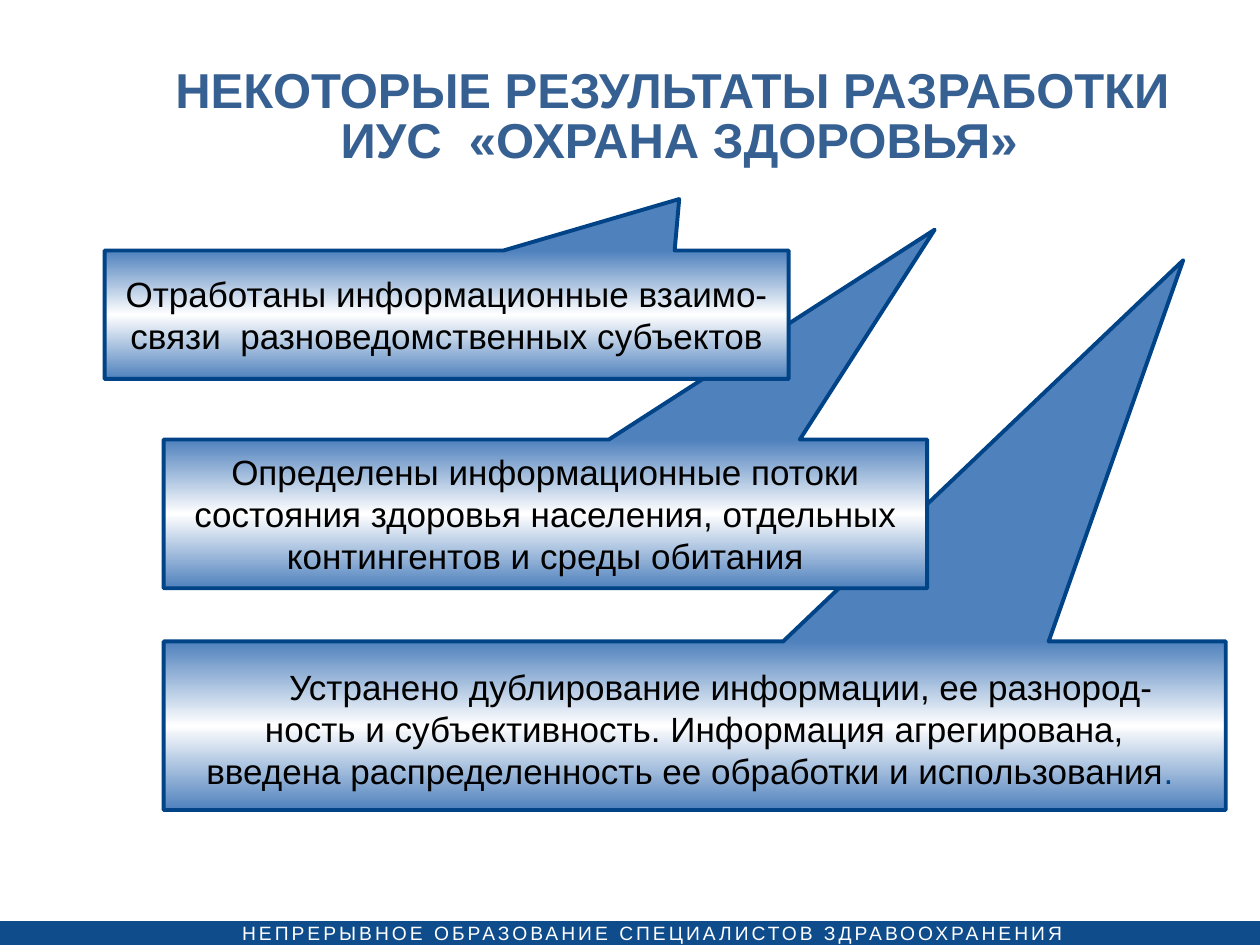
from copy import deepcopy
from dataclasses import dataclass
from pptx import Presentation
from pptx.dml.color import RGBColor as Rgb
from pptx.enum.shapes import MSO_SHAPE as Kind
from pptx.enum.text import MSO_ANCHOR as Anchor, PP_ALIGN as Align
from pptx.util import Cm, Pt


@dataclass(frozen=True)
class Theme:
    font: str = "Arial"
    title: str = "376092"
    edge: str = "004386"
    blue: str = "4F81BD"
    bar: str = "0F4C8B"
    ink: str = "000000"
    white: str = "FFFFFF"
    head: int = 28
    body: int = 20
    foot: int = 11


class Deck:
    def __init__(self, theme):
        self.theme = theme
        self.file = Presentation()
        self.file.slide_width, self.file.slide_height = Cm(25.4), Cm(19.05)
        self.slide = self.file.slides.add_slide(self.file.slide_layouts[6])

    def style(self, run, size, color, bold=False):
        font = run.font
        font.name, font.size, font.bold = self.theme.font, Pt(size), bold
        font.color.rgb = Rgb.from_string(color)

    def shape(self, kind, box):
        item = self.slide.shapes.add_shape(kind, *map(Cm, box))
        item.shadow.inherit = False
        return item

    def frame(self, box):
        frame = self.slide.shapes.add_textbox(*map(Cm, box)).text_frame
        frame.word_wrap = True
        return frame

    def title(self, box, text):
        frame = self.frame(box)
        frame.vertical_anchor = Anchor.MIDDLE
        frame.text = text
        para = frame.paragraphs[0]
        para.alignment, para.line_spacing = Align.CENTER, 0.85
        for run in para.runs:
            self.style(run, self.theme.head, self.theme.title, True)

    def footer(self, bar, box, text):
        band = self.shape(Kind.RECTANGLE, bar)
        band.fill.solid()
        band.fill.fore_color.rgb = Rgb.from_string(self.theme.bar)
        band.line.fill.background()
        frame = self.frame(box)
        frame.margin_left = frame.margin_right = 0
        frame.margin_top = frame.margin_bottom = 0
        frame.text = text
        run = frame.paragraphs[0].runs[0]
        self.style(run, self.theme.foot, self.theme.white)
        run.font._element.set("spc", "170")

    def blend(self, fill):
        fill.gradient()
        fill.gradient_angle = 90
        stops = fill.gradient_stops
        last = stops[1]._gs
        last.addprevious(deepcopy(last))
        colors = self.theme.blue, self.theme.white, self.theme.blue
        for stop, spot, color in zip(fill.gradient_stops, (0, 0.5, 1), colors):
            stop.position = spot
            stop.color.rgb = Rgb.from_string(color)

    def callout(self, box, tip, text, top=0.13, indent=0, tail=""):
        item = self.shape(Kind.RECTANGULAR_CALLOUT, box)
        item.adjustments[0], item.adjustments[1] = tip
        self.blend(item.fill)
        item.line.color.rgb = Rgb.from_string(self.theme.edge)
        item.line.width = Pt(2.25)
        frame = item.text_frame
        frame.word_wrap = True
        frame.vertical_anchor = Anchor.MIDDLE
        frame.margin_top, frame.margin_bottom = Cm(top), Cm(0.13)
        frame.text = text
        for para in frame.paragraphs:
            para.alignment = Align.CENTER
            self.style(para.runs[0], self.theme.body, self.theme.ink)
        if indent:
            props = frame.paragraphs[0]._p.get_or_add_pPr()
            props.set("indent", str(Cm(indent)))
        if tail:
            run = frame.paragraphs[-1].add_run()
            run.text = tail
            self.style(run, self.theme.body, self.theme.edge)


def main():
    deck = Deck(Theme())
    deck.footer((0, 18.57, 25.4, 0.48), (4.88, 18.57, 16.84, 0.48),
                "НЕПРЕРЫВНОЕ ОБРАЗОВАНИЕ СПЕЦИАЛИСТОВ ЗДРАВООХРАНЕНИЯ")
    deck.title((2.49, 0.79, 22.4, 3.2),
               "НЕКОТОРЫЕ РЕЗУЛЬТАТЫ РАЗРАБОТКИ \vИУС  «ОХРАНА ЗДОРОВЬЯ»")
    deck.callout((3.3, 12.93, 21.41, 3.4), (0.46, -2.76),
                 "Устранено дублирование информации, ее разнород-\n"
                 "ность и субъективность. Информация агрегирована,\n"
                 "введена распределенность ее обработки и использования",
                 top=0.25, indent=1.06, tail=". ")
    deck.callout((3.3, 8.86, 15.39, 3), (0.51, -1.91),
                 "Определены информационные потоки\n"
                 "состояния здоровья населения, отдельных\n"
                 "контингентов и среды обитания")
    deck.callout((2.11, 5.05, 13.79, 2.59), (0.34, -0.9),
                 "Отработаны информационные взаимо-\n"
                 "связи  разноведомственных субъектов")
    deck.file.save("out.pptx")


if __name__ == "__main__":
    main()
